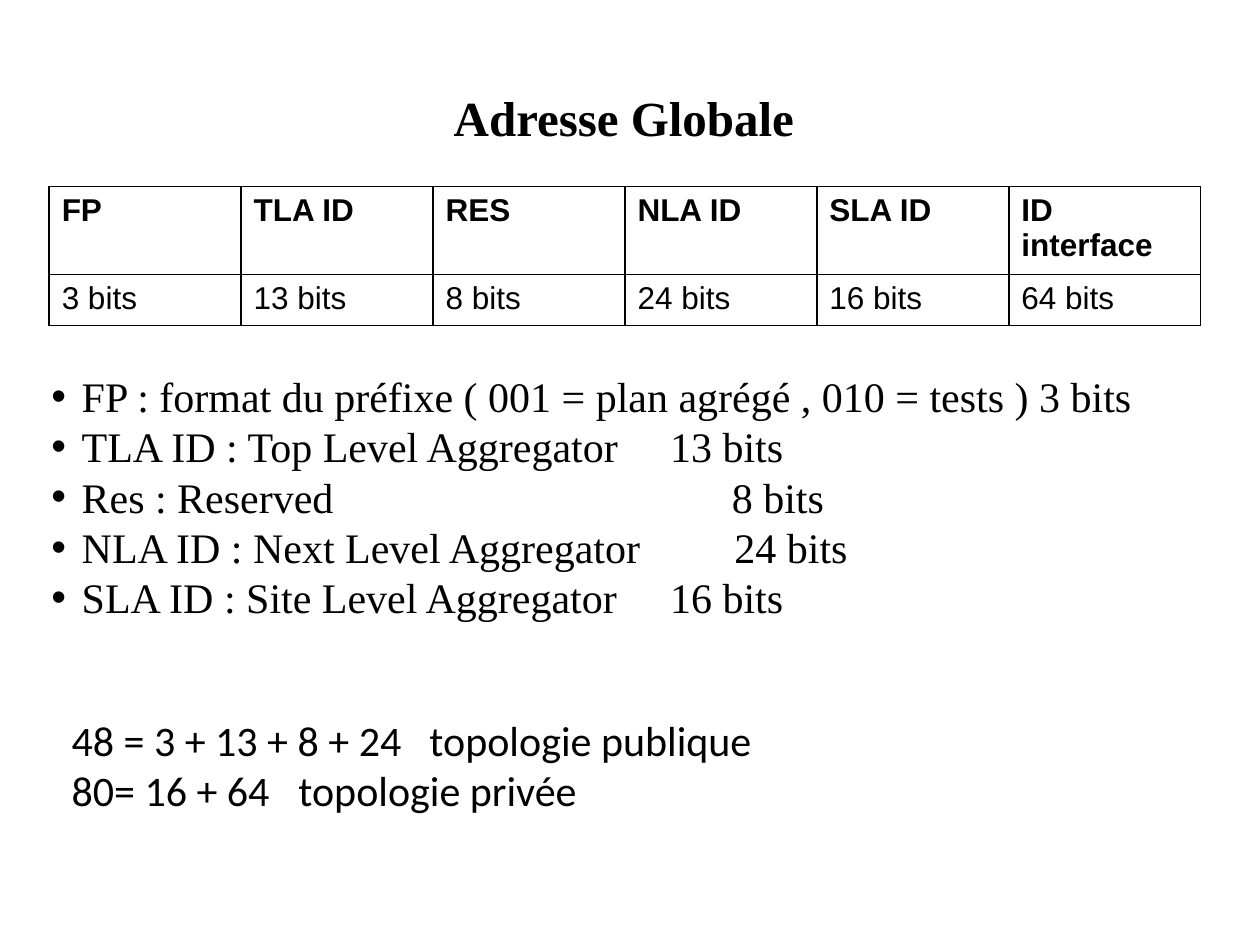
import dataclasses

import pptx
import pptx.dml.color
import pptx.enum.text
import pptx.oxml.ns
import pptx.util
from lxml import etree
from pptx.util import Inches, Pt


@dataclasses.dataclass(frozen=True)
class Theme:
    ink: str = "000000"
    serif: str = "Times New Roman"
    sans: str = "Arial"
    body: str = "Calibri"
    title_size: int = 28
    text_size: int = 24
    table_size: int = 18
    border_width: int = 1


THEME = Theme()

FIELD_SIZES = [
    ("FP", "3 bits"),
    ("TLA ID", "13 bits"),
    ("RES", "8 bits"),
    ("NLA ID", "24 bits"),
    ("SLA ID", "16 bits"),
    ("ID interface", "64 bits"),
]
# Each line of text goes with the tab stop that it uses, in inches
DEFINITIONS = [
    ("FP : format du préfixe ( 001 = plan agrégé , 010 = tests ) 3 bits", None),
    ("TLA ID : Top Level Aggregator\t13 bits", 4.91),
    ("Res : Reserved\t8 bits", 5.4),
    ("NLA ID : Next Level Aggregator\t24 bits", 5.42),
    ("SLA ID : Site Level Aggregator\t16 bits", 4.91),
]
TOPOLOGIES = [
    ("48 = 3 + 13 + 8 + 24\ttopologie publique", 2.84),
    ("80= 16 + 64\ttopologie privée", 1.8),
]


def add_xml(parent, tag, **attributes):
    return etree.SubElement(parent, pptx.oxml.ns.qn(tag), attributes)


def style(paragraph, font_name, size, bold=False):
    font = paragraph.font
    font.name, font.size, font.bold = font_name, Pt(size), bold
    font.color.rgb = pptx.dml.color.RGBColor.from_string(THEME.ink)


def add_text_frame(slide, box):
    frame = slide.shapes.add_textbox(*map(Inches, box)).text_frame
    frame.word_wrap = True
    return frame


def add_lines(slide, box, lines, font_name, hanging=0):
    """Set one paragraph a line; a hanging indent brings a bullet."""
    frame = add_text_frame(slide, box)
    for index, (text, tab_stop) in enumerate(lines):
        paragraph = frame.add_paragraph() if index else frame.paragraphs[0]
        paragraph.text = text
        properties = paragraph._p.get_or_add_pPr()
        if hanging:
            properties.set("marL", str(Inches(hanging)))
            properties.set("indent", str(-Inches(hanging)))
            add_xml(properties, "a:buFont", typeface=THEME.sans)
            add_xml(properties, "a:buChar", char="•")
        if tab_stop:
            tabs = add_xml(properties, "a:tabLst")
            add_xml(tabs, "a:tab", pos=str(Inches(tab_stop)), algn="l")
        style(paragraph, font_name, THEME.text_size)


def add_title(slide, box):
    frame = add_text_frame(slide, box)
    frame.vertical_anchor = pptx.enum.text.MSO_ANCHOR.MIDDLE
    title = frame.paragraphs[0]
    title.text = "Adresse Globale "
    title.alignment = pptx.enum.text.PP_ALIGN.CENTER
    style(title, THEME.serif, THEME.title_size, bold=True)


def add_borders(cell):
    properties = cell._tc.get_or_add_tcPr()
    for position, side in enumerate(("a:lnL", "a:lnR", "a:lnT", "a:lnB")):
        line = etree.Element(pptx.oxml.ns.qn(side), w=str(Pt(THEME.border_width)))
        add_xml(add_xml(line, "a:solidFill"), "a:srgbClr", val=THEME.ink)
        properties.insert(position, line)


def add_field_table(slide, box):
    table = slide.shapes.add_table(2, len(FIELD_SIZES), *map(Inches, box)).table
    table.horz_banding = False
    for column, field in enumerate(FIELD_SIZES):
        for row, text in enumerate(field):
            cell = table.cell(row, column)
            cell.text = text
            cell.fill.background()
            add_borders(cell)
            style(cell.text_frame.paragraphs[0], THEME.sans, THEME.table_size,
                  bold=row == 0)


def main():
    deck = pptx.Presentation()
    deck.slide_width, deck.slide_height = Inches(10), Inches(7.5)
    slide = deck.slides.add_slide(deck.slide_layouts[6])

    # Title and address layout
    add_title(slide, (0.5, 0.3, 9, 1.25))
    add_field_table(slide, (0.39, 1.48, 9.14, 0.81))

    # Meaning of the fields, then the public and private parts
    add_lines(slide, (0.31, 2.89, 9.22, 2.12), DEFINITIONS, THEME.serif, hanging=0.24)
    add_lines(slide, (0.47, 5.62, 7.19, 0.91), TOPOLOGIES, THEME.body)

    deck.save("out.pptx")


if __name__ == "__main__":
    main()
